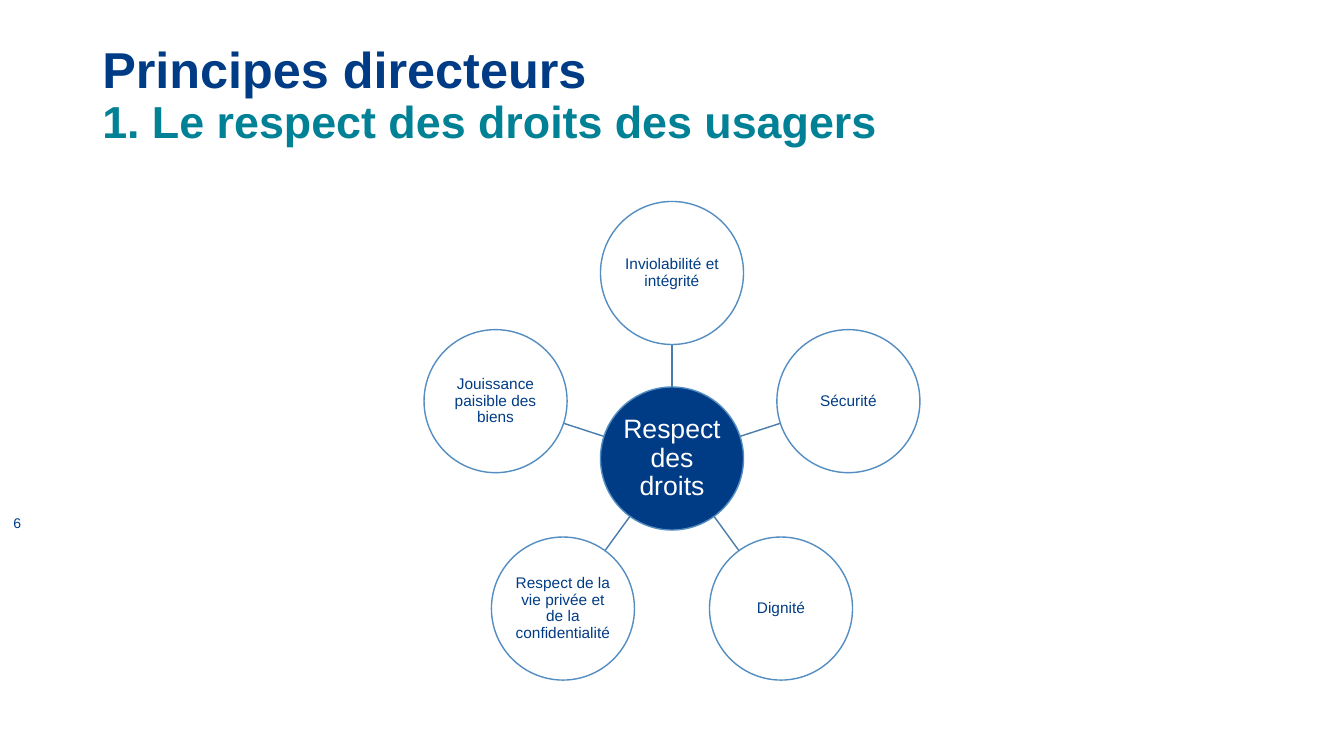
from dataclasses import dataclass
from math import cos, radians, sin

from lxml import etree
from pptx import Presentation
from pptx.dml.color import RGBColor
from pptx.enum.shapes import MSO_CONNECTOR, MSO_SHAPE
from pptx.enum.text import MSO_ANCHOR, PP_ALIGN
from pptx.oxml.ns import qn
from pptx.util import Pt

CENTER = PP_ALIGN.CENTER
MIDDLE = MSO_ANCHOR.MIDDLE
TOP = MSO_ANCHOR.TOP
OVAL = MSO_SHAPE.OVAL
STRAIGHT = MSO_CONNECTOR.STRAIGHT

COLORS = {
    "navy": "003C85",
    "teal": "008196",
    "white": "FFFFFF",
    "outline": "538DC1",
    "spoke": "497CAB",
}
HUB_X, HUB_Y = 480, 327.5
RADIUS = 51.1
ORBIT = 132.5
CIRCLE_FRAME = {
    "margin_left": Pt(0.72),
    "margin_right": Pt(0.72),
    "margin_top": Pt(0.72),
    "margin_bottom": Pt(0.72),
    "vertical_anchor": MIDDLE,
    "word_wrap": True,
}


@dataclass
class Circle:
    text: str
    size: float = 11
    fill: str = "white"
    color: str = "navy"


HUB = Circle("Respect des droits", 19, "navy", "white")
PRINCIPLES = [
    Circle("Inviolabilité et intégrité"),
    Circle("Sécurité"),
    Circle("Dignité"),
    Circle("Respect de la vie privée et de la confidentialité"),
    Circle("Jouissance paisible des biens"),
]


def rgb(name: str) -> RGBColor:
    return RGBColor.from_string(COLORS[name])


def apply_format(target, values: dict) -> None:
    for name, value in values.items():
        setattr(target, name, value)


def add_run(paragraph, text: str, size: float, color: str, bold: bool = False) -> None:
    run = paragraph.add_run()
    run.text = text
    apply_format(run.font, {"name": "Arial", "size": Pt(size), "bold": bold})
    run.font.color.rgb = rgb(color)


def add_text_box(slide, left: float, top: float, width: float, height: float, anchor):
    shape = slide.shapes.add_textbox(Pt(left), Pt(top), Pt(width), Pt(height))
    apply_format(shape.text_frame, {"word_wrap": True, "vertical_anchor": anchor})
    return shape.text_frame.paragraphs[0]


def orbit_point(angle: float, distance: float) -> tuple[float, float]:
    return HUB_X + distance * cos(angle), HUB_Y + distance * sin(angle)


def add_circle(slide, circle: Circle, x: float, y: float) -> None:
    shape = slide.shapes.add_shape(
        OVAL, Pt(x - RADIUS), Pt(y - RADIUS), Pt(2 * RADIUS), Pt(2 * RADIUS)
    )
    shape.shadow.inherit = False
    shape.fill.solid()
    shape.fill.fore_color.rgb = rgb(circle.fill)
    shape.line.color.rgb = rgb("outline")
    shape.line.width = Pt(1)
    apply_format(shape.text_frame, CIRCLE_FRAME)
    paragraph = shape.text_frame.paragraphs[0]
    apply_format(paragraph, {"alignment": CENTER, "line_spacing": 0.9})
    add_run(paragraph, circle.text, circle.size, circle.color)


def add_spoke(slide, angle: float) -> None:
    start = orbit_point(angle, RADIUS)
    end = orbit_point(angle, ORBIT - RADIUS)
    connector = slide.shapes.add_connector(
        STRAIGHT, *(Pt(value) for value in start + end)
    )
    connector.line.color.rgb = rgb("spoke")
    connector.line.width = Pt(1)
    etree.SubElement(connector._element.spPr, qn("a:effectLst"))


def main() -> None:
    presentation = Presentation()
    presentation.slide_width = Pt(960)
    presentation.slide_height = Pt(540)
    slide = presentation.slides.add_slide(presentation.slide_layouts[6])

    title = add_text_box(slide, 66, 28.8, 828, 104.4, TOP)
    title.line_spacing = 0.9
    add_run(title, "Principes directeurs", 36, "navy", True)
    title.add_line_break()
    add_run(title, "1. Le respect des droits des usagers", 32, "teal", True)

    add_circle(slide, HUB, HUB_X, HUB_Y)
    for index, principle in enumerate(PRINCIPLES):
        angle = radians(360 / len(PRINCIPLES) * index - 90)
        add_spoke(slide, angle)
        add_circle(slide, principle, *orbit_point(angle, ORBIT))

    number = add_text_box(slide, 0, 359.3, 24.5, 28.8, MIDDLE)
    number.alignment = CENTER
    add_run(number, "6", 10, "navy")

    presentation.save("out.pptx")


if __name__ == "__main__":
    main()
